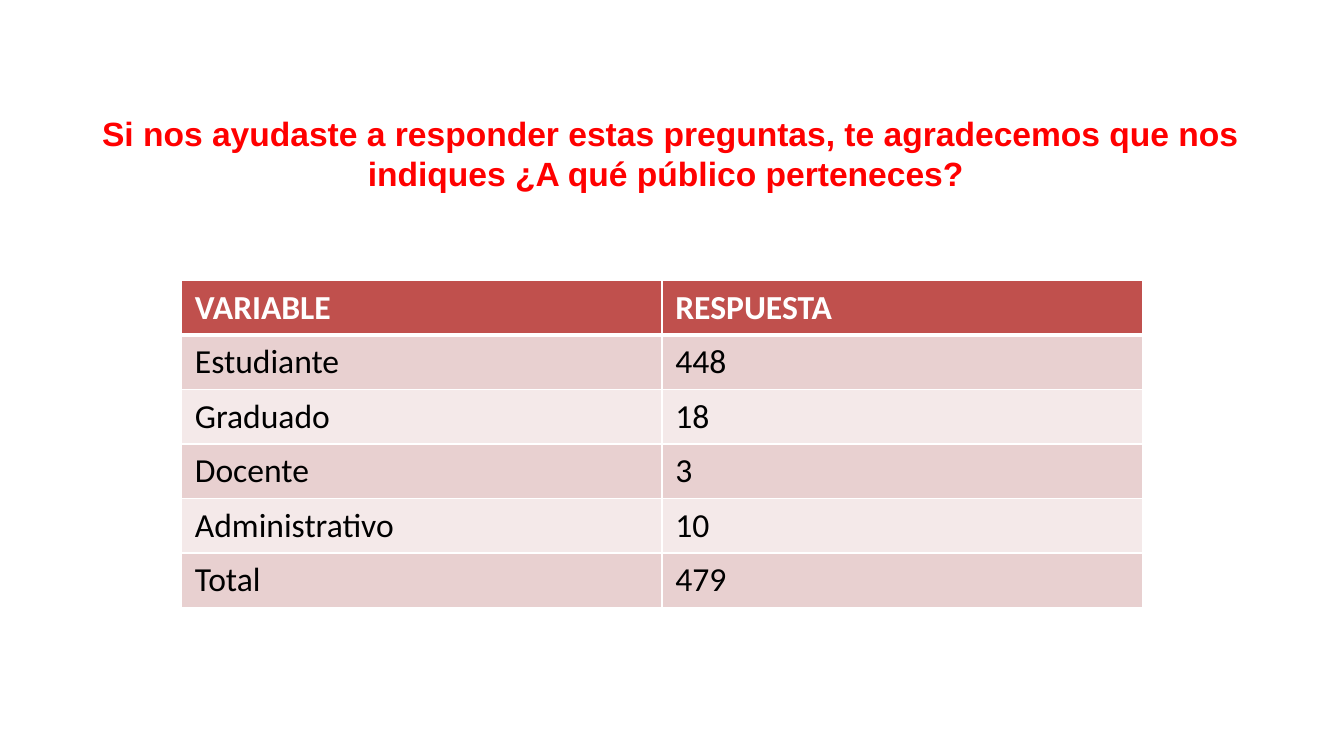
from lxml import etree
from pptx import Presentation, util as u
from pptx.dml.color import RGBColor
from pptx.enum import text
from pptx.oxml.ns import qn

QUESTION = ("Si nos ayudaste a responder estas preguntas, te agradecemos que nos "
            "indiques ¿A qué público perteneces? ")
ANSWERS = [
    ("VARIABLE", "RESPUESTA"),
    ("Estudiante", "448"),
    ("Graduado", "18"),
    ("Docente", "3"),
    ("Administrativo", "10"),
    ("Total", "479"),
]


def rgb(color):
    return RGBColor.from_string(color)


def write(frame, content, font="Calibri", size=18, color="000000", bold=False,
          align=text.PP_ALIGN.LEFT):
    paragraph = frame.paragraphs[0]
    paragraph.alignment = align
    run = paragraph.add_run()
    run.text = content
    run.font.name, run.font.size, run.font.bold = font, u.Pt(size), bold
    run.font.color.rgb = rgb(color)


def set_borders(cell, color, **widths):
    """Draw the cell's sides; widths are points keyed by L, R, T, B."""
    properties = cell._tc.get_or_add_tcPr()
    for position, (side, width) in enumerate(widths.items()):
        line = etree.Element(qn(f"a:ln{side}"), w=str(u.Pt(width)))
        fill = etree.SubElement(line, qn("a:solidFill"))
        etree.SubElement(fill, qn("a:srgbClr"), val=color)
        properties.insert(position, line)


class SurveySlide:
    ACCENT = "C0504D"
    BANDS = ("F4E9E9", "E8D0D0")
    WHITE = "FFFFFF"
    RED = "FF0000"

    def __init__(self, deck):
        self.width, self.height = deck.slide_width, deck.slide_height
        self.slide = deck.slides.add_slide(deck.slide_layouts[5])

    def area(self, left, top, width, height):
        """Turn percentages of the slide's size into lengths."""
        return (int(self.width * left / 100), int(self.height * top / 100),
                int(self.width * width / 100), int(self.height * height / 100))

    def title(self, content, *shares):
        title = self.slide.shapes.title
        title.left, title.top, title.width, title.height = self.area(*shares)
        frame = title.text_frame
        frame.word_wrap = True
        frame.auto_size = text.MSO_AUTO_SIZE.NONE
        frame.vertical_anchor = text.MSO_ANCHOR.TOP
        write(frame, content, font="Arial", color=self.RED, bold=True,
              align=text.PP_ALIGN.CENTER)

    def table(self, rows, *shares):
        table = self.slide.shapes.add_table(
            len(rows), len(rows[0]), *self.area(*shares)).table
        for r, values in enumerate(rows):
            header = r == 0
            for c, value in enumerate(values):
                cell = table.cell(r, c)
                cell.fill.solid()
                cell.fill.fore_color.rgb = rgb(self.ACCENT if header else self.BANDS[r % 2])
                write(cell.text_frame, value, bold=header,
                      color=self.WHITE if header else "000000")
                set_borders(cell, self.WHITE, L=1, R=1,
                            T=3 if r == 1 else 1, B=3 if header else 1)


def main():
    deck = Presentation()
    deck.slide_width = u.Inches(10)
    deck.slide_height = deck.slide_width * 9 // 16
    survey = SurveySlide(deck)
    survey.title(QUESTION, 5.6, 14.06, 88.6, 12.6)
    survey.table(ANSWERS, 13.5, 37.1, 71.5, 43.2)
    deck.save("out.pptx")


if __name__ == "__main__":
    main()
